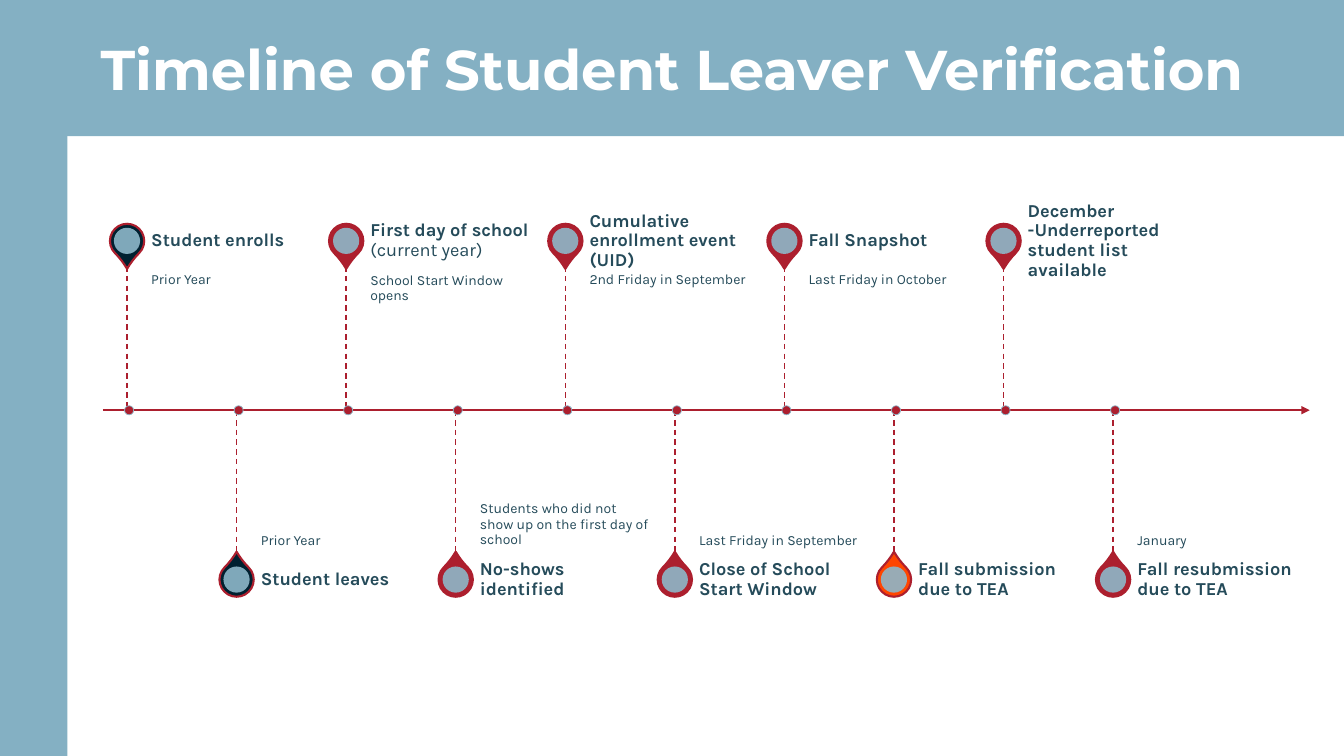
from lxml.etree import SubElement
from pptx import Presentation
from pptx.dml.color import RGBColor
from pptx.enum.dml import MSO_LINE
from pptx.enum.shapes import MSO_CONNECTOR, MSO_SHAPE
from pptx.enum.text import MSO_ANCHOR, MSO_AUTO_SIZE, PP_ALIGN
from pptx.oxml.ns import qn
from pptx.util import Inches, Pt

COLORS = {
    "band": "84B0C3",
    "white": "FFFFFF",
    "red": "AC1F2E",
    "navy": "002030",
    "orange": "FF4500",
    "pale": "8DB7C9",
    "text": "254B5A",
}

MILESTONES = [
    ("navy", [("Student enrolls", True)], "Prior Year"),
    ("navy", [("Student leaves", True)], "Prior Year"),
    ("red", [("First day of school ", True), ("(current year)", False)],
     "School Start Window opens"),
    ("red", [("No-shows identified", True)],
     "Students who did not show up on the first day of school"),
    ("red", [("Cumulative enrollment event (UID)", True)], "2nd Friday in September"),
    ("red", [("Close of School Start Window", True)], "Last Friday in September"),
    ("red", [("Fall Snapshot", True)], "Last Friday in October"),
    ("orange", [("Fall submission due to TEA", True)], None),
    ("red", [("December -Underreported student list available", True)], None),
    ("red", [("Fall resubmission due to TEA", True)], "January"),
]


def rgb(name):
    return RGBColor.from_string(COLORS[name])


def add_filled(s, kind, box, fill, line=None, width=0):
    sp = s.shapes.add_shape(kind, *(Inches(v) for v in box))
    sp.shadow.inherit = False
    sp.fill.solid()
    sp.fill.fore_color.rgb = rgb(fill)
    if line:
        sp.line.color.rgb = rgb(line)
        sp.line.width = Pt(width)
    else:
        sp.line.fill.background()
    return sp


def add_disc(s, x, y, size, fill, line=None, width=0):
    box = (x - size / 2, y - size / 2, size, size)
    return add_filled(s, MSO_SHAPE.OVAL, box, fill, line, width)


def add_line(s, x1, y1, x2, y2, width, dashed=False, arrow=False):
    line = s.shapes.add_connector(
        MSO_CONNECTOR.STRAIGHT, *(Inches(v) for v in (x1, y1, x2, y2)))
    line.line.color.rgb = rgb("red")
    line.line.width = Pt(width)
    if dashed:
        line.line.dash_style = MSO_LINE.DASH
    if arrow:
        SubElement(line.line._get_or_add_ln(), qn("a:tailEnd"), type="triangle")
    SubElement(line._element.spPr, qn("a:effectLst"))


def add_text(s, box, runs, size, anchor, insets):
    tf = s.shapes.add_textbox(*(Inches(v) for v in box)).text_frame
    tf.word_wrap = True
    tf.vertical_anchor = anchor
    tf.margin_left, tf.margin_top, tf.margin_right, tf.margin_bottom = (
        Inches(v) for v in insets)
    p = tf.paragraphs[0]
    p.line_spacing = 0.9
    for text, bold in runs:
        r = p.add_run()
        r.text = text
        r.font.name = "Karla"
        r.font.size = Pt(size)
        r.font.bold = bold
        r.font.color.rgb = rgb("text")


def add_header(s, width, height, side_width, band_height):
    add_filled(s, MSO_SHAPE.RECTANGLE, (0, 0, side_width, height), "band")
    title = s.shapes.title
    title.left, title.top = Inches(0), Inches(0)
    title.width, title.height = Inches(width), Inches(band_height)
    title.fill.solid()
    title.fill.fore_color.rgb = rgb("band")
    tf = title.text_frame
    tf.auto_size = MSO_AUTO_SIZE.NONE
    tf.vertical_anchor = MSO_ANCHOR.MIDDLE
    p = tf.paragraphs[0]
    p.alignment = PP_ALIGN.CENTER
    r = p.add_run()
    r.text = "Timeline of Student Leaver Verification"
    r.font.name = "Montserrat"
    r.font.size = Pt(40)
    r.font.bold = True
    r.font.color.rgb = rgb("white")


def add_milestone(s, x, axis_y, above, color, label, note):
    stem, label_h, text_w, pin = 1.43, 0.5, 1.71, 0.34
    text_x = x + 0.24
    stem_y = axis_y - stem if above else axis_y
    label_y = stem_y - label_h if above else stem_y + stem
    pin_y = label_y + label_h / 2

    drop = add_filled(s, MSO_SHAPE.TEAR,
                      (x - pin / 2, pin_y - pin / 2, pin, pin), color, "red", 1.5)
    drop.adjustments[0] = 1.15
    drop.rotation = 135 if above else 315
    disc = add_disc(s, x, pin_y, 0.26, "pale")
    fill = disc._element.spPr.find(qn("a:solidFill"))
    SubElement(fill[0], qn("a:alpha"), val="90000")

    if note:
        anchor = MSO_ANCHOR.TOP if above else MSO_ANCHOR.BOTTOM
        insets = (0, 0.07, 0.07, 0.1) if above else (0, 0.1, 0, 0.07)
        add_text(s, (text_x, stem_y, text_w, stem), [(note, False)], 10, anchor, insets)
    add_text(s, (text_x, label_y, text_w, label_h), label, 13,
             MSO_ANCHOR.MIDDLE, (0, 0, 0.09, 0))
    add_line(s, x, stem_y, x, stem_y + stem, 1, dashed=True)
    add_disc(s, x + 0.02, axis_y, 0.09, "red", "pale", 0.5)


def add_timeline(s, left, axis_y, width):
    add_line(s, left, axis_y, left + width, axis_y, 1.5, arrow=True)
    first = left + 0.24
    step = (width - 2.19) / (len(MILESTONES) - 1)
    for i, (color, label, note) in enumerate(MILESTONES):
        add_milestone(s, first + i * step, axis_y, i % 2 == 0, color, label, note)


def main():
    prs = Presentation()
    prs.slide_width, prs.slide_height = Inches(13.33), Inches(7.5)
    s = prs.slides.add_slide(prs.slide_layouts[5])
    add_header(s, 13.33, 7.5, 0.67, 1.35)
    add_timeline(s, 1.02, 4.07, 11.97)
    prs.save("out.pptx")


if __name__ == "__main__":
    main()
